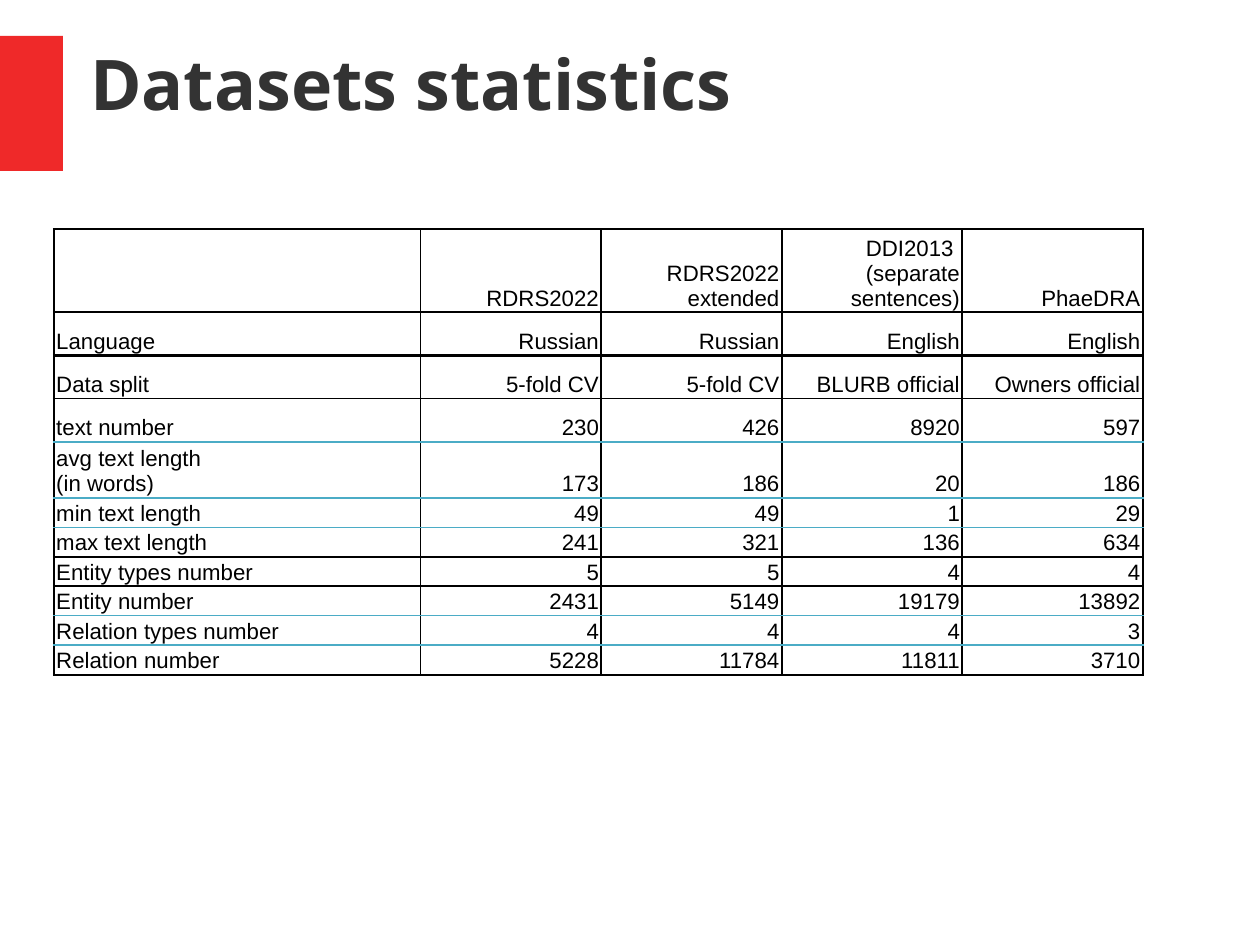
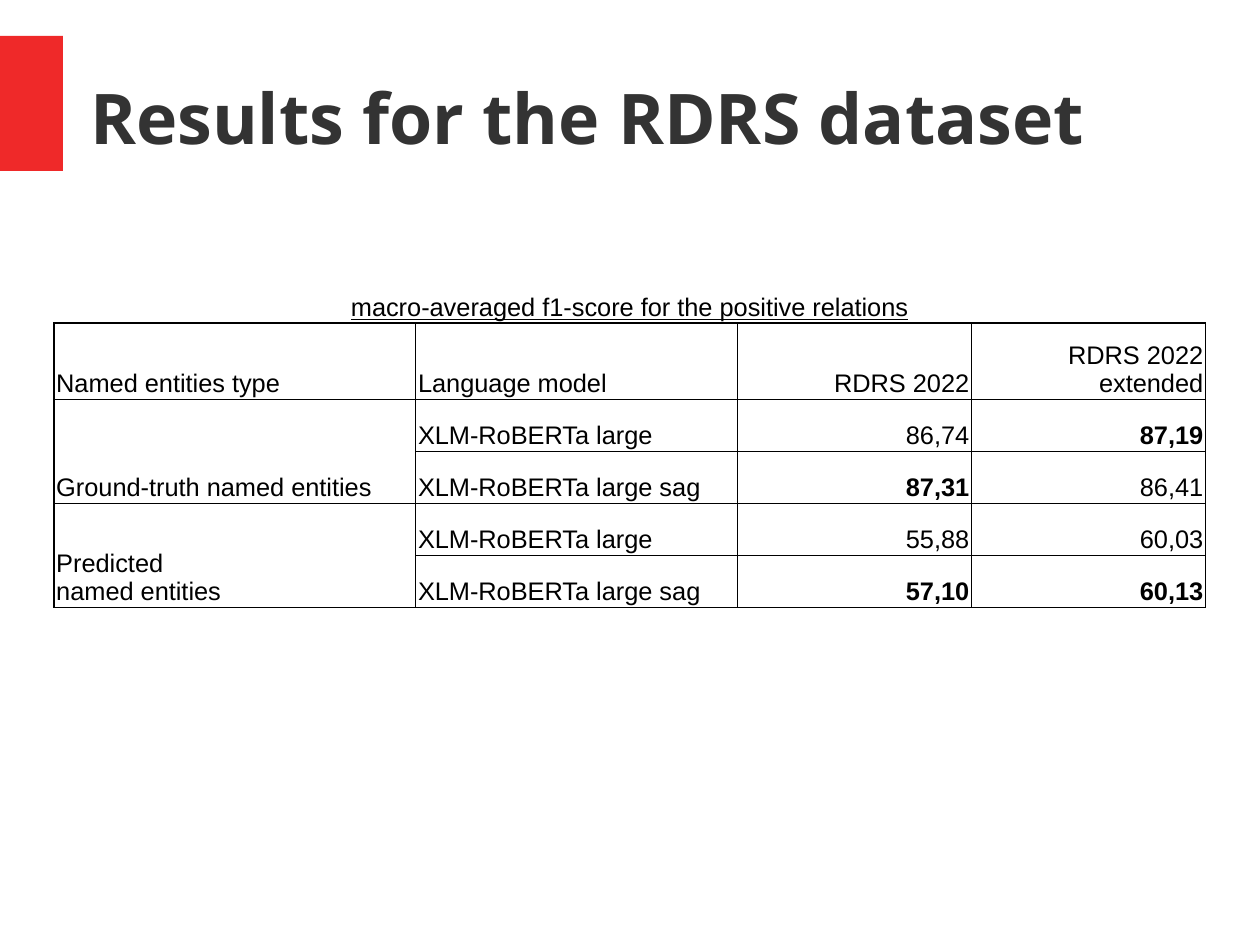
from dataclasses import dataclass
from typing import NamedTuple, Optional

import lxml.etree
import pptx
import pptx.dml.color
import pptx.enum.shapes
import pptx.enum.text
import pptx.oxml.ns
import pptx.util

Cm = pptx.util.Cm
Pt = pptx.util.Pt
Align = pptx.enum.text.PP_ALIGN
Anchor = pptx.enum.text.MSO_ANCHOR

COLORS = {
    "accent": "EF2929",
    "title": "333333",
    "text": "000000",
    "teal": "4BACC6",
    "white": "FFFFFF",
}


class Line(NamedTuple):
    color: str
    width: float


FINE = Line("text", 0.75)
THIN = Line("text", 1)
THICK = Line("text", 1.5)
TEAL = Line("teal", 1)


@dataclass(frozen=True)
class TableSpec:
    top: float
    column_widths: list[float]
    row_heights: list[float]
    column_lines: list[Optional[Line]]
    row_lines: list[Optional[Line]]
    rows: list[list[str]]
    font_size: int
    left_columns: int
    fill: Optional[str] = None
    caption_rows: int = 0
    merges: tuple[tuple[int, int, int, int], ...] = ()
    bold: tuple[tuple[int, int], ...] = ()


@dataclass(frozen=True)
class SlideSpec:
    title: str
    title_top: float
    table: TableSpec


STATISTICS = TableSpec(
    top=5.09,
    column_widths=[8.15] + [4.01] * 4,
    row_heights=[1.85] + [0.96] * 3 + [1.24] + [0.65] * 6,
    column_lines=[THICK, THIN] + [THICK] * 4,
    row_lines=[THICK] * 3 + [THIN] + [TEAL] * 3 + [THICK] * 2 + [TEAL] * 2 + [THICK],
    rows=[
        ["", "RDRS2022", "RDRS2022\vextended", "DDI2013 \n(separate sentences)", "PhaeDRA"],
        ["Language", "Russian", "Russian", "English", "English"],
        ["Data split", "5-fold CV", "5-fold CV", "BLURB official", "Owners official"],
        ["text number", "230", "426", "8920", "597"],
        ["avg text length\v(in words)", "173", "186", "20", "186"],
        ["min text length", "49", "49", "1", "29"],
        ["max text length", "241", "321", "136", "634"],
        ["Entity types number", "5", "5", "4", "4"],
        ["Entity number", "2431", "5149", "19179", "13892"],
        ["Relation types number", "4", "4", "4", "3"],
        ["Relation number", "5228", "11784", "11811", "3710"],
    ],
    font_size=14,
    left_columns=1,
    fill="white",
)

RESULTS = TableSpec(
    top=4.7,
    column_widths=[8.04, 7.15, 5.2, 5.2],
    row_heights=[2.48, 1.7] + [1.155] * 4,
    column_lines=[FINE, THIN, THIN, THIN, FINE],
    row_lines=[None] + [THIN] * 5 + [FINE],
    rows=[
        ["macro-averaged f1-score for the positive relations", "", "", ""],
        ["Named entities type", "Language model", "RDRS 2022", "RDRS 2022 extended"],
        ["Ground-truth named entities", "XLM-RoBERTa large", "86,74", "87,19"],
        ["", "XLM-RoBERTa large sag", "87,31", "86,41"],
        ["Predicted \vnamed entities", "XLM-RoBERTa large", "55,88", "60,03"],
        ["", "XLM-RoBERTa large sag", "57,10", "60,13"],
    ],
    font_size=16,
    left_columns=2,
    caption_rows=1,
    merges=((0, 0, 0, 3), (2, 0, 3, 0), (4, 0, 5, 0)),
    bold=((2, 3), (3, 2), (5, 2), (5, 3)),
)

SLIDES = [
    SlideSpec("Datasets statistics", 0.89, STATISTICS),
    SlideSpec("Results for the RDRS dataset", 1.65, RESULTS),
]


def rgb(name: str) -> pptx.dml.color.RGBColor:
    return pptx.dml.color.RGBColor.from_string(COLORS[name])


def add_layout_band(layout, slide) -> None:
    band = slide.shapes.add_shape(
        pptx.enum.shapes.MSO_SHAPE.RECTANGLE, Cm(0), Cm(0.8), Cm(1.4), Cm(3)
    )
    band.shadow.inherit = False
    band.fill.solid()
    band.fill.fore_color.rgb = rgb("accent")
    band.line.fill.background()
    layout.shapes.element.append(band.element)


def format_title(slide, text: str, top: float) -> None:
    title = slide.shapes.title
    title.left, title.top, title.width, title.height = Cm(2), Cm(top), Cm(24.6), Cm(1.88)
    frame = title.text_frame
    frame.text = text
    frame.margin_left = frame.margin_right = frame.margin_top = frame.margin_bottom = 0
    frame.vertical_anchor = Anchor.MIDDLE
    frame.word_wrap = True
    frame.auto_size = pptx.enum.text.MSO_AUTO_SIZE.SHAPE_TO_FIT_TEXT
    paragraph = frame.paragraphs[0]
    paragraph.alignment = Align.LEFT
    paragraph.font.name = "Noto Sans"
    paragraph.font.size = Pt(44)
    paragraph.font.bold = True
    paragraph.font.color.rgb = rgb("title")


def set_border(cell, side: str, line: Optional[Line]) -> None:
    qn = pptx.oxml.ns.qn
    properties = cell._tc.get_or_add_tcPr()
    border = lxml.etree.SubElement(properties, qn(f"a:ln{side}"))
    if line is None:
        lxml.etree.SubElement(border, qn("a:noFill"))
        return
    border.set("w", str(int(Pt(line.width))))
    fill = lxml.etree.SubElement(border, qn("a:solidFill"))
    lxml.etree.SubElement(fill, qn("a:srgbClr"), val=COLORS[line.color])


def format_cell(cell, spec: TableSpec, row: int, column: int) -> None:
    is_caption = row < spec.caption_rows
    if not cell.is_spanned:
        last_row = row + (cell.span_height if cell.is_merge_origin else 1)
        last_column = column + (cell.span_width if cell.is_merge_origin else 1)
        set_border(cell, "L", None if is_caption else spec.column_lines[column])
        set_border(cell, "R", None if is_caption else spec.column_lines[last_column])
        set_border(cell, "T", spec.row_lines[row])
        set_border(cell, "B", spec.row_lines[last_row])
    if spec.fill:
        cell.fill.solid()
        cell.fill.fore_color.rgb = rgb(spec.fill)
    else:
        cell.fill.background()
    cell.margin_left = cell.margin_right = Cm(0.05)
    cell.margin_top = cell.margin_bottom = Cm(0.03)
    cell.vertical_anchor = Anchor.BOTTOM
    if cell.is_spanned:
        return
    cell.text_frame.text = spec.rows[row][column]
    for paragraph in cell.text_frame.paragraphs:
        if is_caption:
            paragraph.alignment = Align.CENTER
        else:
            paragraph.alignment = Align.LEFT if column < spec.left_columns else Align.RIGHT
        paragraph.font.name = "Arial"
        paragraph.font.size = Pt(spec.font_size)
        paragraph.font.bold = (row, column) in spec.bold
        paragraph.font.underline = is_caption
        paragraph.font.color.rgb = rgb("text")


def add_table(slide, spec: TableSpec) -> None:
    table = slide.shapes.add_table(
        len(spec.row_heights),
        len(spec.column_widths),
        Cm(1.2),
        Cm(spec.top),
        Cm(sum(spec.column_widths)),
        Cm(sum(spec.row_heights)),
    ).table
    table.first_row = False
    table.horz_banding = False
    for table_column, width in zip(table.columns, spec.column_widths):
        table_column.width = Cm(width)
    for table_row, height in zip(table.rows, spec.row_heights):
        table_row.height = Cm(height)
    for first_row, first_column, last_row, last_column in spec.merges:
        table.cell(first_row, first_column).merge(table.cell(last_row, last_column))
    for row in range(len(spec.row_heights)):
        for column in range(len(spec.column_widths)):
            format_cell(table.cell(row, column), spec, row, column)


def main() -> None:
    presentation = pptx.Presentation()
    presentation.slide_width = Cm(28)
    presentation.slide_height = Cm(21)
    layout = presentation.slide_layouts.get_by_name("Title Only")
    for index, spec in enumerate(SLIDES):
        slide = presentation.slides.add_slide(layout)
        if index == 0:
            add_layout_band(layout, slide)
        format_title(slide, spec.title, spec.title_top)
        add_table(slide, spec.table)
    presentation.save("out.pptx")


if __name__ == "__main__":
    main()
